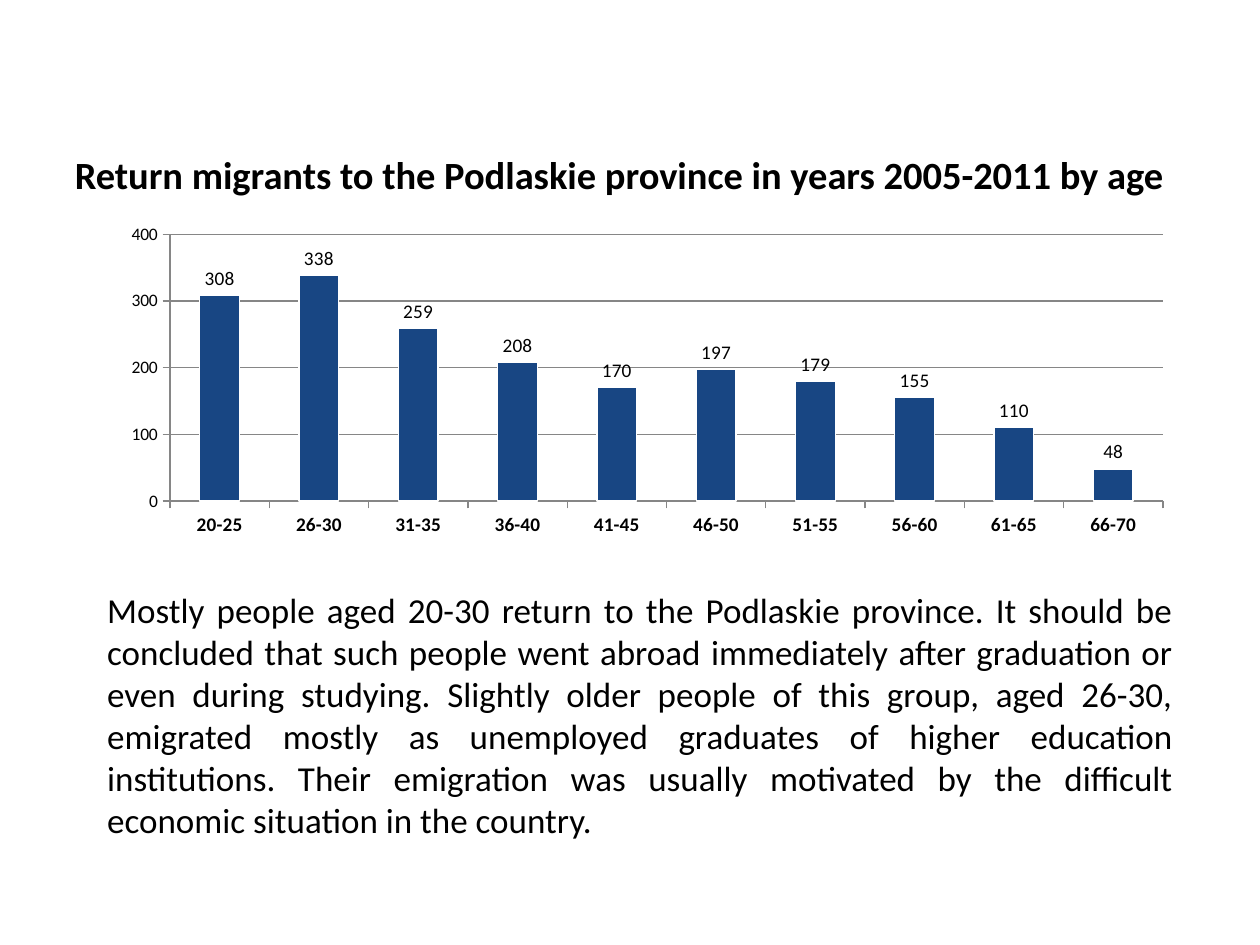
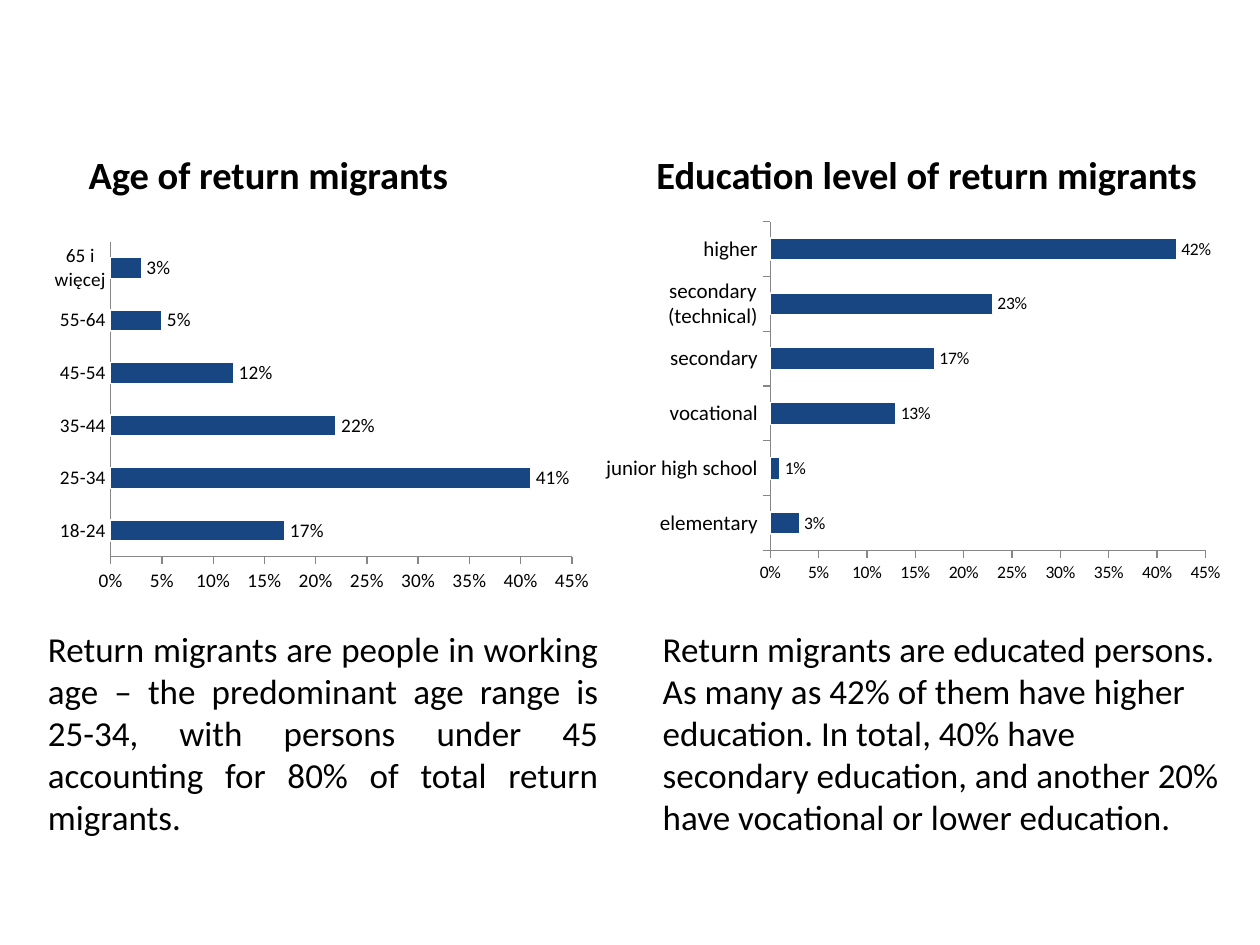
from lxml import etree
from pptx import Presentation
from pptx.chart.data import CategoryChartData
from pptx.dml.color import RGBColor
from pptx.enum.chart import XL_CHART_TYPE, XL_LABEL_POSITION, XL_TICK_MARK
from pptx.enum.text import MSO_ANCHOR, MSO_AUTO_SIZE, PP_ALIGN
from pptx.oxml.ns import qn
from pptx.util import Inches, Pt

COLUMN, BAR = XL_CHART_TYPE.COLUMN_CLUSTERED, XL_CHART_TYPE.BAR_CLUSTERED
OUT, NO_TICK = XL_TICK_MARK.OUTSIDE, XL_TICK_MARK.NONE
LEFT, CENTER, JUSTIFY = PP_ALIGN.LEFT, PP_ALIGN.CENTER, PP_ALIGN.JUSTIFY
FONT = "Calibri"
BLACK = RGBColor(0x00, 0x00, 0x00)
WHITE = RGBColor(0xFF, 0xFF, 0xFF)
NAVY = RGBColor(0x18, 0x46, 0x83)
GRAY = RGBColor(0x86, 0x86, 0x86)
HEAD_TOP, HEAD_H = 1.15, 0.47

# Content: each slide has a layout and panels of heading, chart and text.
# "slots" are the placeholder numbers of heading and text; x is (left, width).
SLIDES = [
    {"layout": 1, "panels": [{
        "slots": (0, 1),
        "heading": "Return migrants to the Podlaskie province in years 2005-2011 by age",
        "heading_x": (0.35, 9.13),
        "text": "Mostly people aged 20-30 return to the Podlaskie province. It should be "
                "concluded that such people went abroad immediately after graduation or even "
                "during studying. Slightly older people of this group, aged 26-30, emigrated "
                "mostly as unemployed graduates of higher education institutions. Their "
                "emigration was usually motivated by the difficult economic situation in the "
                "country.",
        "text_box": (0.75, 4.62, 8.66, 2.12), "align": JUSTIFY,
        "chart": {
            "type": COLUMN, "box": (0.83, 1.78, 8.66, 2.68), "plot": (0.06, 0.03, 0.91, 0.79),
            "data": {"20-25": 308, "26-30": 338, "31-35": 259, "36-40": 208, "41-45": 170,
                     "46-50": 197, "51-55": 179, "56-60": 155, "61-65": 110, "66-70": 48},
            "max": 400, "step": 100, "format": "0", "grid": True, "overlap": 0,
            "cat_size": 11, "cat_bold": True, "cat_tick": OUT,
            "val_size": 10, "label_size": 11},
    }]},
    {"layout": 4, "panels": [{
        "slots": (0, 2),
        "heading": "Age of return migrants", "heading_x": (0.2, 3.86),
        "text": "Return migrants are people in working age – the predominant age range is "
                "25-34, with persons under 45 accounting for 80% of total return migrants.",
        "text_box": (0.28, 4.93, 4.57, 1.78), "align": JUSTIFY,
        "chart": {
            "type": BAR, "box": (0.35, 1.86, 4.41, 2.91), "plot": (0.12, 0.02, 0.83, 0.86),
            "data": {"18-24": 0.17, "25-34": 0.41, "35-44": 0.22, "45-54": 0.12,
                     "55-64": 0.05, "65 i więcej": 0.03},
            "max": 0.45, "step": 0.05, "format": "0%", "grid": False, "overlap": -25,
            "cat_size": 11, "cat_bold": False, "cat_tick": NO_TICK,
            "val_size": 11, "label_size": 11},
    }, {
        "slots": (3, 4),
        "heading": "Education level of return migrants", "heading_x": (5.08, 4.55),
        "text": "Return migrants are educated persons. As many as 42% of them have higher "
                "education. In total, 40% have secondary education, and another 20% have "
                "vocational or lower education.",
        "text_box": (5.16, 4.93, 4.65, 1.78), "align": LEFT,
        "chart": {
            "type": BAR, "box": (4.69, 1.7, 5.08, 3), "plot": (0.28, 0.02, 0.68, 0.87),
            "data": {"elementary": 0.03, "junior high school": 0.01, "vocational": 0.13,
                     "secondary": 0.17, "secondary (technical)": 0.23, "higher": 0.42},
            "max": 0.45, "step": 0.05, "format": "0%", "grid": False, "overlap": 0,
            "cat_size": 12, "cat_bold": False, "cat_tick": OUT,
            "val_size": 10, "label_size": 10},
    }]},
]


def style_font(font, size, bold=False):
    font.name, font.size, font.bold = FONT, Pt(size), bold
    font.color.rgb = BLACK


def fill_placeholder(sp, box, text, size, align, bold=False):
    sp.left, sp.top, sp.width, sp.height = map(Inches, box)
    tf = sp.text_frame
    tf.word_wrap, tf.auto_size = True, MSO_AUTO_SIZE.NONE
    tf.vertical_anchor = MSO_ANCHOR.TOP
    p = tf.paragraphs[0]
    pPr = p._p.get_or_add_pPr()
    pPr.set("marL", "0")
    pPr.set("indent", "0")
    etree.SubElement(pPr, qn("a:buNone"))
    p.alignment, p.space_before = align, Pt(0)
    r = p.add_run()
    r.text = text
    style_font(r.font, size, bold)


def set_plot_area(chart, shares):
    """Fix the inner plot area as shares of the chart's size."""
    area = chart._chartSpace.chart.plotArea
    for old in area.findall(qn("c:layout")):
        area.remove(old)
    layout = etree.Element(qn("c:layout"))
    manual = etree.SubElement(layout, qn("c:manualLayout"))
    settings = [("layoutTarget", "inner"), ("xMode", "edge"), ("yMode", "edge")]
    for tag, val in settings + list(zip("xywh", shares)):
        etree.SubElement(manual, qn("c:" + tag)).set("val", str(val))
    area.insert(0, layout)


def add_bar_chart(s, spec_):
    data = CategoryChartData(number_format=spec_["format"])
    data.categories = list(spec_["data"])
    data.add_series("Series 1", list(spec_["data"].values()))
    chart = s.shapes.add_chart(spec_["type"], *map(Inches, spec_["box"]), data).chart
    chart.has_legend = chart.has_title = False
    style_font(chart.font, 10)
    set_plot_area(chart, spec_["plot"])

    # Axes
    cat, val = chart.category_axis, chart.value_axis
    style_font(cat.tick_labels.font, spec_["cat_size"], spec_["cat_bold"])
    style_font(val.tick_labels.font, spec_["val_size"])
    cat.major_tick_mark, val.major_tick_mark = spec_["cat_tick"], OUT
    val.minimum_scale, val.maximum_scale, val.major_unit = 0, spec_["max"], spec_["step"]
    val.tick_labels.number_format = spec_["format"]
    val.tick_labels.number_format_is_linked = False
    val.has_major_gridlines = spec_["grid"]
    lines = [cat.format.line, val.format.line]
    if spec_["grid"]:
        lines.append(val.major_gridlines.format.line)
    for line in lines:
        line.color.rgb, line.width = GRAY, Pt(0.75)

    # Bars and their labels
    plot = chart.plots[0]
    plot.vary_by_categories, plot.gap_width, plot.overlap = False, 150, spec_["overlap"]
    bars = plot.series[0].format
    bars.fill.solid()
    bars.fill.fore_color.rgb = NAVY
    bars.line.color.rgb, bars.line.width = WHITE, Pt(0.75)
    plot.has_data_labels = True
    labels = plot.data_labels
    labels.show_value, labels.position = True, XL_LABEL_POSITION.OUTSIDE_END
    labels.number_format, labels.number_format_is_linked = spec_["format"], False
    style_font(labels.font, spec_["label_size"])


def main():
    prs = Presentation()
    prs.slide_width, prs.slide_height = Inches(10), Inches(7.5)
    for page in SLIDES:
        s = prs.slides.add_slide(prs.slide_layouts[page["layout"]])
        slots = {sp.placeholder_format.idx: sp for sp in s.placeholders}
        for panel in page["panels"]:
            heading, body = (slots.pop(i) for i in panel["slots"])
            left, width = panel["heading_x"]
            fill_placeholder(heading, (left, HEAD_TOP, width, HEAD_H),
                             panel["heading"], 22, CENTER, bold=True)
            fill_placeholder(body, panel["text_box"], panel["text"], 20, panel["align"])
            add_bar_chart(s, panel["chart"])
        for unused in slots.values():
            unused._element.getparent().remove(unused._element)
    prs.save("out.pptx")


if __name__ == "__main__":
    main()
